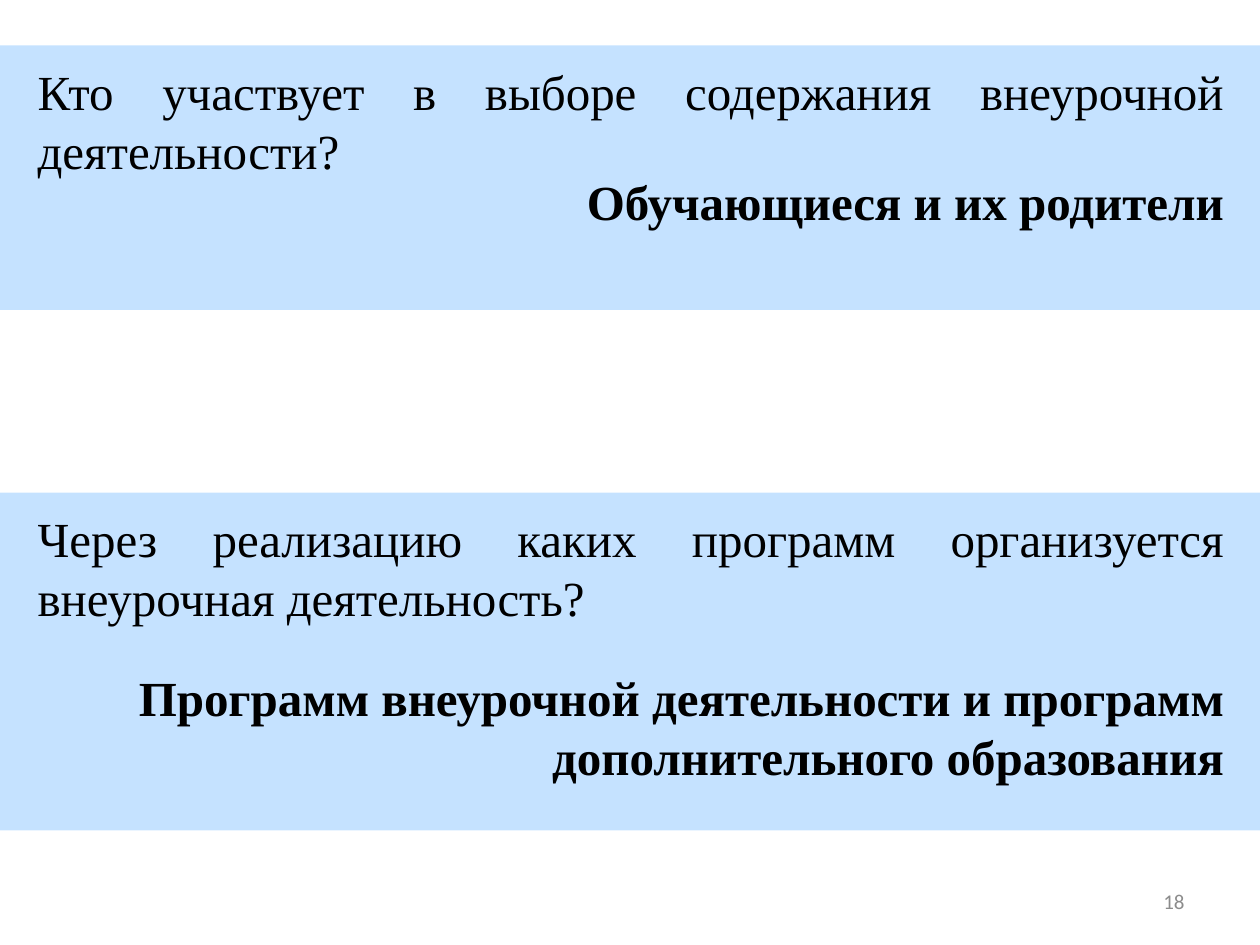
from lxml import etree
from pptx import Presentation
from pptx import util as u
from pptx.dml.color import RGBColor
from pptx.enum import shapes, text
from pptx.oxml.ns import qn

SLIDE_WIDTH, SLIDE_HEIGHT = 10, 7.5
TEXT_LEFT, TEXT_WIDTH = 0.2, 9.61
QUESTION_OFFSET = 0.08  # from the top of the band

# band top, band height, question, answer top, answer height, answer
QUESTIONS = [
    (0.36, 2.1, "Кто участвует в выборе содержания внеурочной деятельности?",
     1.31, 0.57, "Обучающиеся и их родители"),
    (3.91, 2.68, "Через реализацию каких программ организуется внеурочная деятельность?",
     5.25, 1.04, "Программ внеурочной деятельности и программ дополнительного образования"),
]


def color(hex_string):
    return RGBColor.from_string(hex_string)


class QuizSlide:
    font = "Times New Roman"
    size = 28
    ink = "000000"
    band_fill = "99CCFF"
    band_opacity = 56

    def __init__(self, slide):
        self.slide = slide

    def band(self, top, height):
        """Add a translucent strip across the whole slide."""
        strip = self.slide.shapes.add_shape(
            shapes.MSO_SHAPE.RECTANGLE, 0, u.Inches(top),
            u.Inches(SLIDE_WIDTH), u.Inches(height))
        strip.shadow.inherit = False
        strip.line.fill.background()
        strip.fill.solid()
        strip.fill.fore_color.rgb = color(self.band_fill)
        fill_color = strip.fill._xPr.find(qn("a:solidFill"))[0]
        etree.SubElement(fill_color, qn("a:alpha"), val=str(self.band_opacity * 1000))

    def label(self, wording, left, top, width, height, align, bold=False,
              font=None, size=None, ink=None, anchor=text.MSO_ANCHOR.TOP):
        box = self.slide.shapes.add_textbox(
            *(u.Inches(length) for length in (left, top, width, height)))
        frame = box.text_frame
        frame.word_wrap = True
        frame.vertical_anchor = anchor
        frame.text = wording
        paragraph = frame.paragraphs[0]
        paragraph.alignment = align
        style = paragraph.runs[0].font
        style.name = font or self.font
        style.size = u.Pt(size or self.size)
        style.bold = bold
        style.color.rgb = color(ink or self.ink)

    def question(self, wording, top):
        self.label(wording, TEXT_LEFT, top, TEXT_WIDTH, 1.04, text.PP_ALIGN.JUSTIFY)

    def answer(self, wording, top, height):
        self.label(wording, TEXT_LEFT, top, TEXT_WIDTH, height,
                   text.PP_ALIGN.RIGHT, bold=True)

    def page_number(self, number):
        self.label(number, 7.17, 6.95, 2.33, 0.4, text.PP_ALIGN.RIGHT,
                   font="Calibri", size=12, ink="8C8C8C",
                   anchor=text.MSO_ANCHOR.MIDDLE)


def main():
    deck = Presentation()
    deck.slide_width = u.Inches(SLIDE_WIDTH)
    deck.slide_height = u.Inches(SLIDE_HEIGHT)
    blank_layout = deck.slide_layouts[6]
    quiz = QuizSlide(deck.slides.add_slide(blank_layout))
    for band_top, band_height, question, answer_top, answer_height, answer in QUESTIONS:
        quiz.band(band_top, band_height)
        quiz.question(question, band_top + QUESTION_OFFSET)
        quiz.answer(answer, answer_top, answer_height)
    quiz.page_number("18")
    deck.save("out.pptx")


if __name__ == "__main__":
    main()
